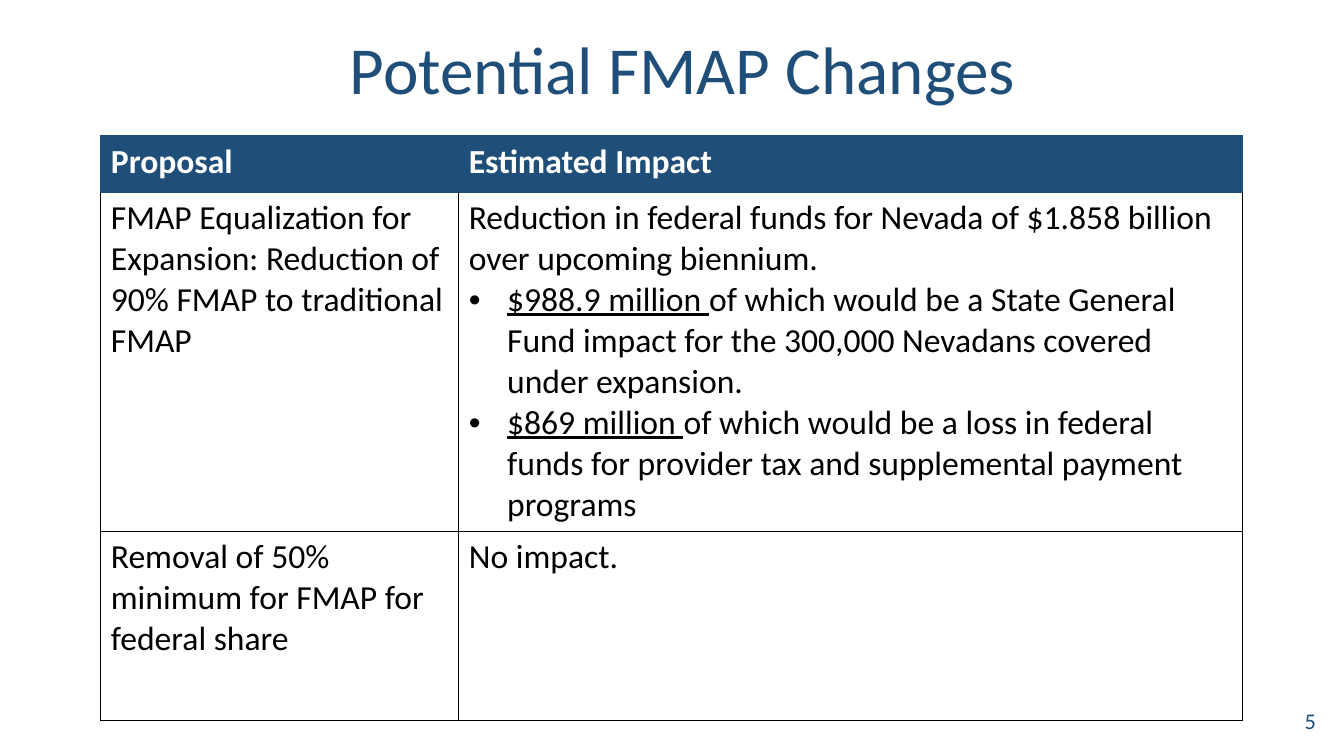
from lxml import etree
from pptx import Presentation
from pptx.dml.color import RGBColor
from pptx.enum.text import MSO_ANCHOR, PP_ALIGN
from pptx.oxml.ns import qn
from pptx.util import Pt

EMU_PER_PX = 9144  # 100 px to the inch
MIDDLE = MSO_ANCHOR.MIDDLE
CENTER, RIGHT = PP_ALIGN.CENTER, PP_ALIGN.RIGHT
TITLE_ONLY = 5
FONT = "Calibri"
COLORS = {"navy": "1F4E79", "white": "FFFFFF", "black": "000000"}

COLUMN_WIDTHS = [355, 777]
ROW_HEIGHTS = [56, 336, 188]
BULLET_INDENT = 38

# A cell is a list of paragraphs; a pair is a bullet with an underlined amount.
PROPOSALS = [
    [["Proposal"], ["Estimated Impact"]],
    [
        ["FMAP Equalization for Expansion: Reduction of 90% FMAP to traditional FMAP"],
        [
            "Reduction in federal funds for Nevada of $1.858 billion over upcoming biennium.",
            ("$988.9 million ",
             "of which would be a State General Fund impact for the 300,000 "
             "Nevadans covered under expansion."),
            ("$869 million ",
             "of which would be a loss in federal funds for provider tax and "
             "supplemental payment programs"),
        ],
    ],
    [["Removal of 50% minimum for FMAP for federal share"], ["No impact."]],
]


def px(length):
    return length * EMU_PER_PX


def rgb(color):
    return RGBColor.from_string(COLORS[color])


def place(part, box):
    part.left, part.top, part.width, part.height = map(px, box)


def set_font(paragraph, size, color, bold=False):
    font = paragraph.font
    font.name, font.size, font.bold = FONT, Pt(size), bold
    font.color.rgb = rgb(color)


def add_bullet(paragraph):
    properties = paragraph._p.get_or_add_pPr()
    properties.set("marL", str(px(BULLET_INDENT)))
    properties.set("indent", str(-px(BULLET_INDENT)))
    etree.SubElement(properties, qn("a:buFont"), typeface="Arial")
    etree.SubElement(properties, qn("a:buChar"), char="•")


def add_borders(cell, side_colors):
    """Draw 1 pt borders, given colours in the order left, right, top, bottom."""
    properties = cell._tc.get_or_add_tcPr()
    for side, color in zip("LRTB", side_colors):
        line = etree.SubElement(properties, qn(f"a:ln{side}"), w=str(Pt(1)))
        fill = etree.SubElement(line, qn("a:solidFill"))
        etree.SubElement(fill, qn("a:srgbClr"), val=COLORS[color])


def write_cell(cell, paragraphs, color, bold):
    for index, content in enumerate(paragraphs):
        frame = cell.text_frame
        paragraph = frame.add_paragraph() if index else frame.paragraphs[0]
        if isinstance(content, tuple):
            amount, explanation = content
            add_bullet(paragraph)
            amount_run = paragraph.add_run()
            amount_run.text = amount
            amount_run.font.underline = True
            paragraph.add_run().text = explanation
        else:
            paragraph.add_run().text = content
        set_font(paragraph, 24, color, bold)


def fill_title(slide, box):
    title = slide.shapes.title
    place(title, box)
    title.text_frame.text = "Potential FMAP Changes"
    title.text_frame.vertical_anchor = MIDDLE
    heading = title.text_frame.paragraphs[0]
    heading.alignment = CENTER
    heading.line_spacing = 0.9
    set_font(heading, 48, "navy")


def add_proposal_table(slide, left, top):
    table = slide.shapes.add_table(
        len(ROW_HEIGHTS), len(COLUMN_WIDTHS), px(left), px(top),
        px(sum(COLUMN_WIDTHS)), px(sum(ROW_HEIGHTS))).table
    table.horz_banding = False
    for column, width in zip(table.columns, COLUMN_WIDTHS):
        column.width = px(width)
    for row_index, (row, height) in enumerate(zip(table.rows, ROW_HEIGHTS)):
        row.height = px(height)
        is_header = row_index == 0
        edge = "navy" if is_header else "black"
        top_edge = "navy" if row_index < 2 else "black"
        bottom_edge = edge
        for cell, paragraphs in zip(row.cells, PROPOSALS[row_index]):
            add_borders(cell, [edge, edge, top_edge, bottom_edge])
            cell.fill.solid()
            cell.fill.fore_color.rgb = rgb("navy" if is_header else "white")
            write_cell(cell, paragraphs, "white" if is_header else "black", is_header)


def add_page_number(slide, box):
    frame = slide.shapes.add_textbox(*map(px, box)).text_frame
    frame.word_wrap = True
    frame.vertical_anchor = MIDDLE
    number = frame.paragraphs[0]
    number.add_run().text = "5"
    number.alignment = RIGHT
    set_font(number, 16, "navy")


def main():
    presentation = Presentation()
    presentation.slide_width, presentation.slide_height = px(1333), px(750)
    slide = presentation.slides.add_slide(presentation.slide_layouts[TITLE_ONLY])
    fill_title(slide, (39, 0, 1276, 145))
    add_page_number(slide, (1015, 695, 300, 40))
    add_proposal_table(slide, 100, 135)
    presentation.save("out.pptx")


if __name__ == "__main__":
    main()
